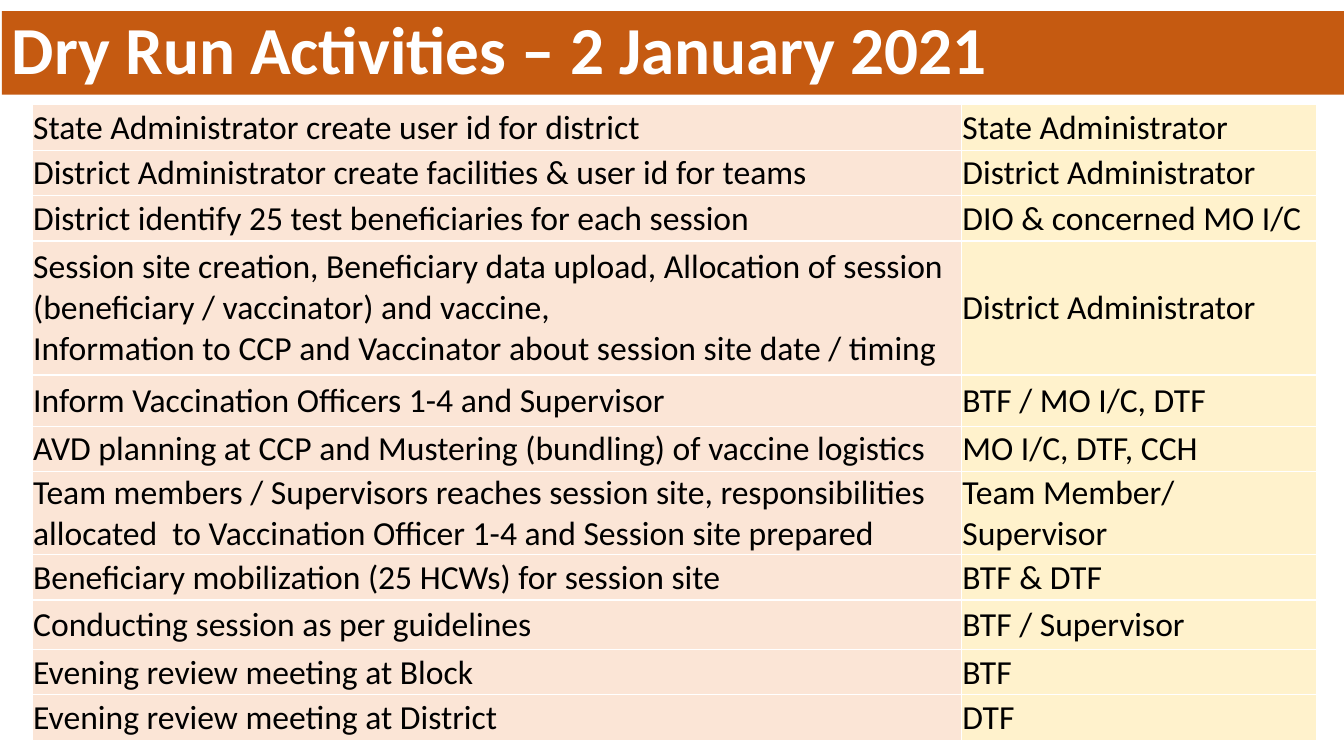
from lxml.etree import SubElement
from pptx import Presentation
from pptx.dml.color import RGBColor
from pptx.enum.shapes import MSO_SHAPE as Shape
from pptx.enum.text import MSO_ANCHOR as Anchor, PP_ALIGN as Align
from pptx.oxml.ns import qn
from pptx.util import Pt

ROW_HEIGHT = 32.4
ACTIVITIES = [
    # paragraphs of the activity, who is responsible, row height
    (["State Administrator create user id for district"], "State Administrator", ROW_HEIGHT),
    (["District Administrator create facilities & user id for teams"],
     "District Administrator", ROW_HEIGHT),
    (["District identify 25 test beneficiaries for each session"],
     "DIO & concerned MO I/C", ROW_HEIGHT),
    (["Session site creation, Beneficiary data upload, Allocation of session "
      "(beneficiary / vaccinator) and vaccine,",
      "Information to CCP and Vaccinator about session site date / timing"],
     "District Administrator", 95.8),
    (["Inform Vaccination Officers 1-4 and Supervisor"], "BTF / MO I/C, DTF", 36.7),
    (["AVD planning at CCP and Mustering (bundling) of vaccine logistics"],
     "MO I/C, DTF, CCH", ROW_HEIGHT),
    (["Team members / Supervisors reaches session site, responsibilities "
      "allocated  to Vaccination Officer 1-4 and Session site prepared"],
     "Team Member/ Supervisor", 59),
    (["Beneficiary mobilization (25 HCWs) for session site"], "BTF & DTF", ROW_HEIGHT),
    (["Conducting session as per guidelines"], "BTF / Supervisor", 35.3),
    (["Evening review meeting at Block"], "BTF", ROW_HEIGHT),
    (["Evening review meeting at District"], "DTF", ROW_HEIGHT),
]


def color(value):
    return RGBColor.from_string(value)


class SlideBuilder:
    font = "Calibri"
    white, black = "FFFFFF", "000000"
    banner_fill = "C55A11"
    column_fills = ("FBE5D6", "FFF2CC")

    def __init__(self, page):
        self.page = page

    def text(self, frame, paragraphs, size, ink, bold=False, line_spacing=None):
        frame.word_wrap = True
        for index, wording in enumerate(paragraphs):
            para = frame.add_paragraph() if index else frame.paragraphs[0]
            para.alignment = Align.LEFT
            if line_spacing:
                para.line_spacing = line_spacing
            span = para.add_run()
            span.text = wording
            span.font.name = self.font
            span.font.size = Pt(size)
            span.font.bold = bold
            span.font.color.rgb = color(ink)

    def banner(self, wording, left, top, width, height):
        box = self.page.shapes.add_shape(
            Shape.RECTANGLE, Pt(left), Pt(top), Pt(width), Pt(height))
        box.shadow.inherit = False
        box.fill.solid()
        box.fill.fore_color.rgb = color(self.banner_fill)
        box.line.fill.background()
        box.text_frame.vertical_anchor = Anchor.MIDDLE
        self.text(box.text_frame, [wording], 48, self.white, bold=True, line_spacing=0.9)

    def borders(self, cell):
        """Draw thin white lines on all four sides; they must precede the fill."""
        properties = cell._tc.get_or_add_tcPr()
        for side in ("lnL", "lnR", "lnT", "lnB"):
            line = SubElement(properties, qn(f"a:{side}"), w=str(Pt(1)))
            fill = SubElement(line, qn("a:solidFill"))
            SubElement(fill, qn("a:srgbClr"), val=self.white)

    def cell(self, cell, paragraphs, fill):
        self.borders(cell)
        cell.fill.solid()
        cell.fill.fore_color.rgb = color(fill)
        cell.vertical_anchor = Anchor.MIDDLE
        cell.margin_left = cell.margin_right = cell.margin_top = Pt(0.7)
        cell.margin_bottom = Pt(0)
        self.text(cell.text_frame, paragraphs, 24, self.black)

    def table(self, rows, left, top, widths):
        height = sum(row[-1] for row in rows)
        table = self.page.shapes.add_table(
            len(rows), len(widths), Pt(left), Pt(top), Pt(sum(widths)), Pt(height)).table
        table.first_row = table.horz_banding = False
        for column, width in zip(table.columns, widths):
            column.width = Pt(width)
        for index, (activity, responsible, row_height) in enumerate(rows):
            table.rows[index].height = Pt(row_height)
            contents = (activity, [responsible])
            for cell, paragraphs, fill in zip(
                    table.rows[index].cells, contents, self.column_fills):
                self.cell(cell, paragraphs, fill)


def main():
    deck = Presentation()
    deck.slide_width, deck.slide_height = Pt(960), Pt(540)
    builder = SlideBuilder(deck.slides.add_slide(deck.slide_layouts[6]))
    builder.banner("Dry Run Activities – 2 January 2021", 1.4, 7.9, 960, 59.8)
    builder.table(ACTIVITIES, 23, 74.9, (663.8, 253.4))
    deck.save("out.pptx")


if __name__ == "__main__":
    main()
